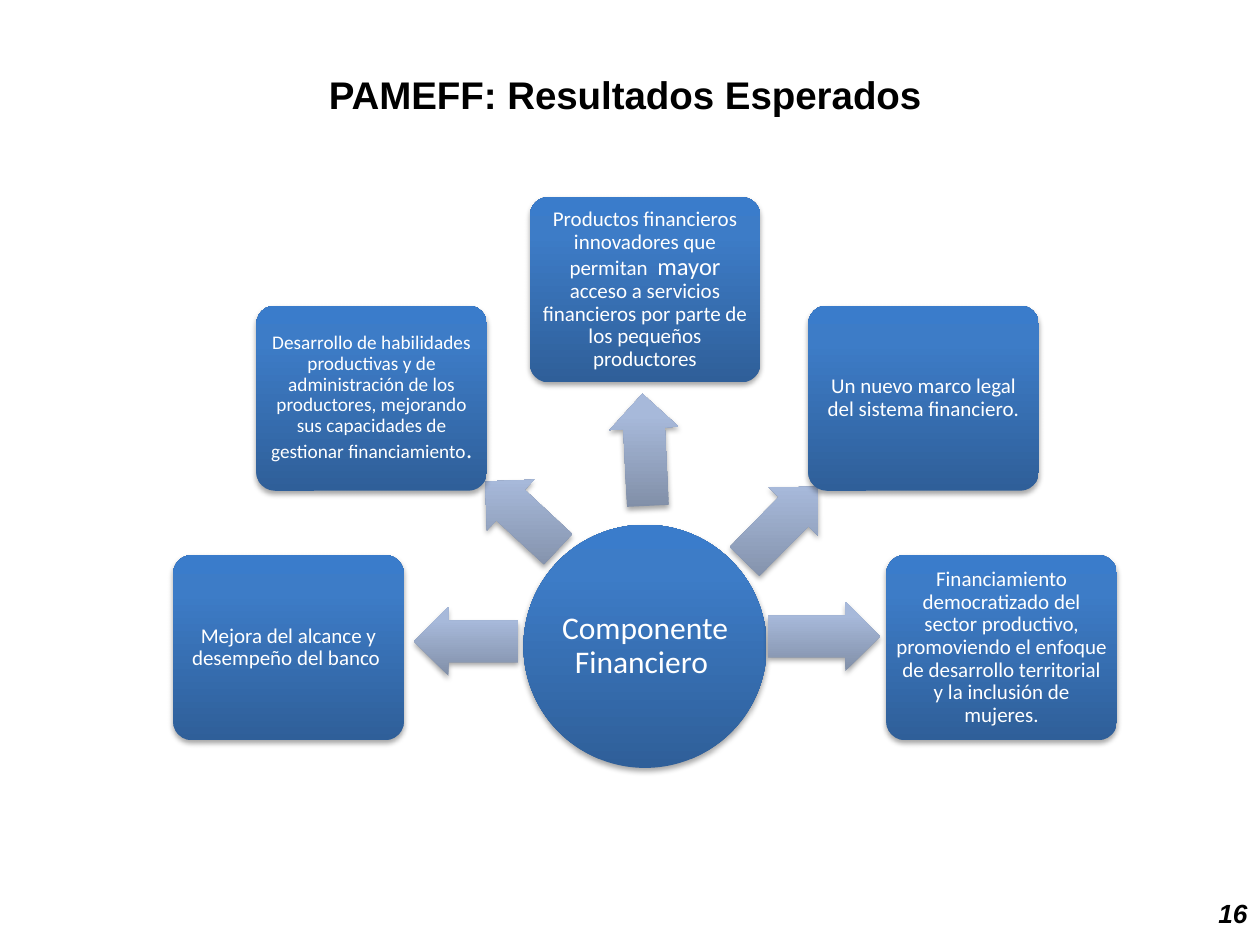
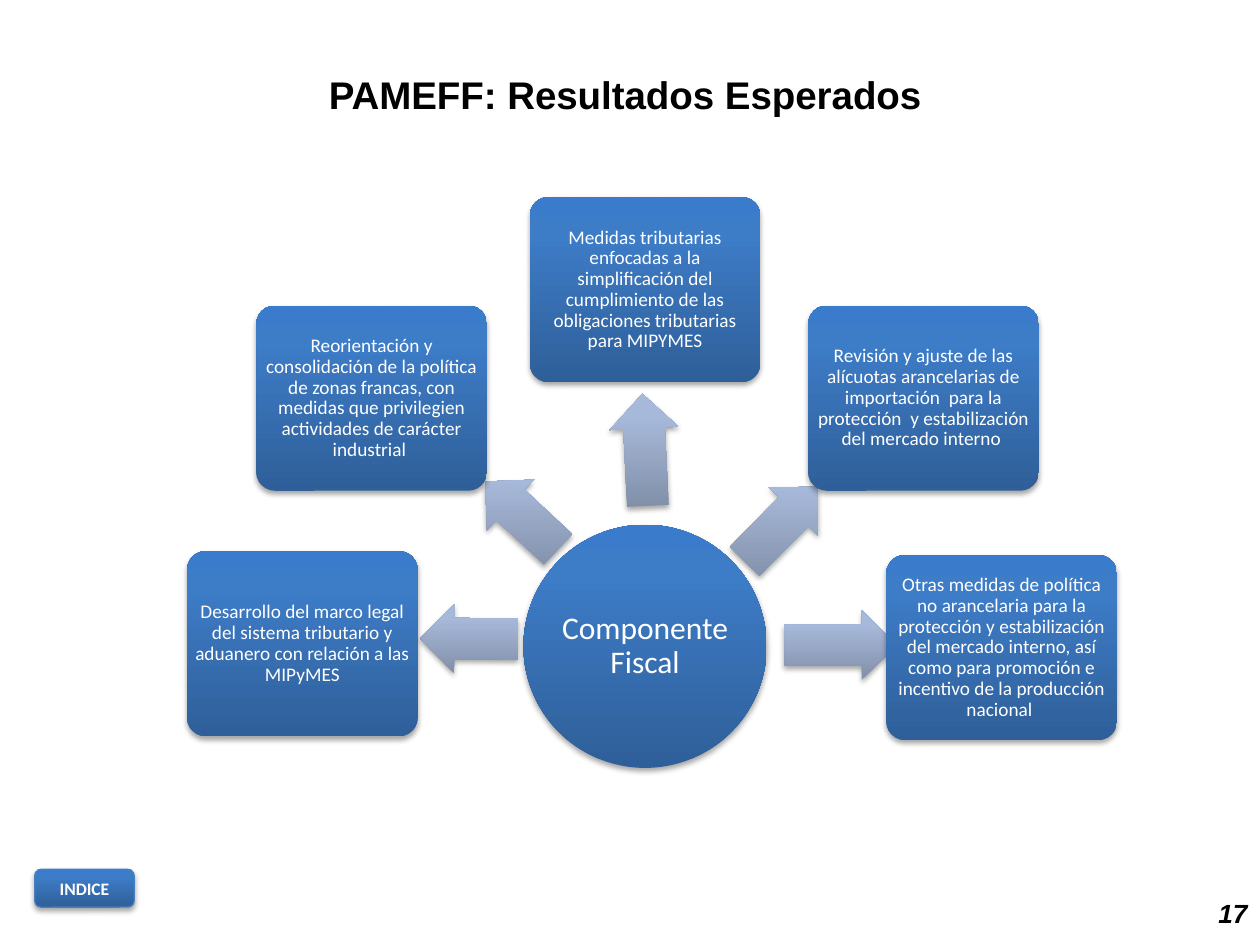
import pptx
import pptx.util
import pptx.dml.color
import pptx.enum.shapes
import pptx.enum.text
import pptx.oxml
import pptx.oxml.ns

Inches = pptx.util.Inches
RGBColor = pptx.dml.color.RGBColor
SHAPE = pptx.enum.shapes.MSO_SHAPE
ALIGN = pptx.enum.text.PP_ALIGN
MIDDLE = pptx.enum.text.MSO_ANCHOR.MIDDLE

# Content: title, hub and results, clockwise from the left.
# A result is a list of (text, size) runs.
TITLE = "PAMEFF: Resultados Esperados "
SLIDES = [
    {
        "number": "16",
        "hub": "Componente Financiero ",
        "results": [
            [("Mejora del alcance y desempeño del banco ", 12)],
            [("Desarrollo de habilidades productivas y de administración de los "
              "productores, mejorando sus capacidades de gestionar "
              "financiamiento", 11), (".", 14)],
            [("Productos financieros innovadores que permitan  ", 12),
             ("mayor", 14),
             (" acceso a servicios financieros por parte de los pequeños "
              "productores", 12)],
            [("Un nuevo marco legal del sistema financiero.", 12)],
            [("Financiamiento democratizado del sector productivo, promoviendo "
              "el enfoque de desarrollo territorial y la inclusión de "
              "mujeres.", 12)],
        ],
        "moved_boxes": {},
        "moved_arrows": {},
        "button": None,
    },
    {
        "number": "17",
        "hub": "Componente  Fiscal ",
        "results": [
            [("Desarrollo del marco legal del sistema tributario y aduanero con "
              "relación a las MIPyMES", 11)],
            [("Reorientación y consolidación de la política de zonas francas, "
              "con medidas que privilegien actividades de carácter "
              "industrial ", 11)],
            [("Medidas tributarias enfocadas a la simplificación del "
              "cumplimiento de las obligaciones tributarias para MIPYMES", 11)],
            [("Revisión y ajuste de las alícuotas arancelarias de importación  "
              "para la protección  y estabilización del mercado interno ", 11)],
            [("Otras medidas de política no arancelaria para la protección y "
              "estabilización del mercado interno, así como para promoción e "
              "incentivo de la producción nacional ", 11)],
        ],
        "moved_boxes": {0: (-2.72, -0.02)},
        "moved_arrows": {0: (-1.4, -0.06, 0.78, 0.4), 4: (1.55, -0.01, 0.89, 180)},
        "button": "INDICE",
    },
]

# Layout in inches; boxes and arrows are centred at offsets from the hub
SLIDE_WIDTH, SLIDE_HEIGHT = 10, 7.5
HUB_CENTRE = (5.12, 5.13)
HUB_DIAMETER = 1.93
BOX_WIDTH, BOX_HEIGHT = 1.83, 1.47
ARROW_THICKNESS = 0.55
BOX_OFFSETS = [(-2.83, 0.01), (-2.17, -1.97), (0, -2.83), (2.21, -1.97), (2.83, 0.01)]
# Horizontal offset, vertical offset, length, rotation
ARROWS = [
    (-1.42, -0.04, 0.83, 0),
    (-0.98, -1.04, 0.79, 42.9),
    (0, -1.56, 0.89, 87.2),
    (1.08, -0.97, 0.83, 134.5),
    (1.42, -0.08, 0.89, 180),
]

# Shared looks
BLACK = RGBColor(0x00, 0x00, 0x00)
WHITE = RGBColor(0xFF, 0xFF, 0xFF)
BUTTON_LINE = RGBColor(0x4B, 0x7E, 0xBC)
BLUE_STOPS = [(0, RGBColor(0x2F, 0x5F, 0x99)), (80, RGBColor(0x3D, 0x7C, 0xC7)),
              (100, RGBColor(0x3A, 0x7C, 0xCB))]
PALE_STOPS = [(0, RGBColor(0x81, 0x8F, 0xA8)), (80, RGBColor(0xA7, 0xB9, 0xDA)),
              (100, RGBColor(0xA7, 0xBA, 0xDC))]
TITLE_FONT = {"name": "Arial", "bold": True}
NUMBER_FONT = {"name": "Arial", "bold": True, "italic": True}
BODY_FONT = {"name": "Calibri"}
BUTTON_FONT = {"name": "Calibri", "bold": True}


def write_text(shape, runs, font_format, color, align=ALIGN.CENTER,
               line_spacing=None, margin=None):
    frame = shape.text_frame
    frame.word_wrap = True
    frame.vertical_anchor = MIDDLE
    if margin is not None:
        for side in ("left", "top", "right", "bottom"):
            setattr(frame, f"margin_{side}", Inches(margin))
    paragraph = frame.paragraphs[0]
    paragraph.alignment = align
    paragraph.line_spacing = line_spacing
    for text, size in runs:
        run = paragraph.add_run()
        run.text = text
        run.font.size = pptx.util.Pt(size)
        run.font.color.rgb = color
        for name, value in font_format.items():
            setattr(run.font, name, value)


def add_text(slide, box, *text_arguments):
    shape = slide.shapes.add_textbox(*map(Inches, box))
    write_text(shape, *text_arguments)


def add_glossy_shape(slide, kind, centre, size, stops, adjustments=()):
    """Preset shape with an upright gradient and a soft drop shadow."""
    left, top = (c - s / 2 for c, s in zip(centre, size))
    shape = slide.shapes.add_shape(kind, *map(Inches, (left, top, *size)))
    for index, value in enumerate(adjustments):
        shape.adjustments[index] = value
    shape.line.fill.background()
    shape.shadow.inherit = False

    namespace = pptx.oxml.ns.nsdecls("a")
    stop_xml = "".join(
        f'<a:gs pos="{position * 1000}"><a:srgbClr val="{color}"/></a:gs>'
        for position, color in stops)
    gradient = pptx.oxml.parse_xml(
        f'<a:gradFill {namespace} rotWithShape="0"><a:gsLst>{stop_xml}</a:gsLst>'
        '<a:lin ang="16200000" scaled="0"/></a:gradFill>')
    shadow = pptx.oxml.parse_xml(
        f'<a:outerShdw {namespace} blurRad="40000" dist="23000" dir="5400000" '
        'rotWithShape="0"><a:srgbClr val="000000"><a:alpha val="35000"/>'
        '</a:srgbClr></a:outerShdw>')
    properties = shape.element.spPr
    properties.find(pptx.oxml.ns.qn("a:prstGeom")).addnext(gradient)
    properties.find(pptx.oxml.ns.qn("a:effectLst")).append(shadow)
    return shape


def from_hub(offset):
    return tuple(c + o for c, o in zip(HUB_CENTRE, offset))


def build_slide(presentation, content):
    slide = presentation.slides.add_slide(presentation.slide_layouts[6])

    # Title and page number
    add_text(slide, (0.35, 0.17, 9.31, 1.16), [(TITLE, 22)], TITLE_FONT, BLACK)
    add_text(slide, (SLIDE_WIDTH - 2.33, SLIDE_HEIGHT - 0.5, 2.33, 0.5),
             [(content["number"], 15)], NUMBER_FONT, BLACK, ALIGN.RIGHT)

    # Hub
    hub = add_glossy_shape(slide, SHAPE.OVAL, HUB_CENTRE,
                           (HUB_DIAMETER, HUB_DIAMETER), BLUE_STOPS)
    write_text(hub, [(content["hub"], 18)], BODY_FONT, WHITE,
               line_spacing=0.9, margin=0.01)

    # Each arrow lies behind the result it points to
    for index, runs in enumerate(content["results"]):
        x, y, length, rotation = content["moved_arrows"].get(index, ARROWS[index])
        arrow = add_glossy_shape(slide, SHAPE.LEFT_ARROW, from_hub((x, y)),
                                 (length, ARROW_THICKNESS), PALE_STOPS, (0.6, 0.5))
        arrow.rotation = rotation
        offset = content["moved_boxes"].get(index, BOX_OFFSETS[index])
        box = add_glossy_shape(slide, SHAPE.ROUNDED_RECTANGLE, from_hub(offset),
                               (BOX_WIDTH, BOX_HEIGHT), BLUE_STOPS, (0.1,))
        write_text(box, runs, BODY_FONT, WHITE, line_spacing=0.9,
                   margin=0.03 if runs[0][1] == 12 else 0.02)

    # Index button
    if content["button"]:
        button = add_glossy_shape(slide, SHAPE.ROUNDED_RECTANGLE, (0.67, 7.05),
                                  (0.79, 0.3), BLUE_STOPS)
        button.line.color.rgb = BUTTON_LINE
        button.line.width = pptx.util.Pt(0.75)
        write_text(button, [(content["button"], 10)], BUTTON_FONT, WHITE)


def main():
    presentation = pptx.Presentation()
    presentation.slide_width = Inches(SLIDE_WIDTH)
    presentation.slide_height = Inches(SLIDE_HEIGHT)
    for content in SLIDES:
        build_slide(presentation, content)
    presentation.save("out.pptx")


if __name__ == "__main__":
    main()
